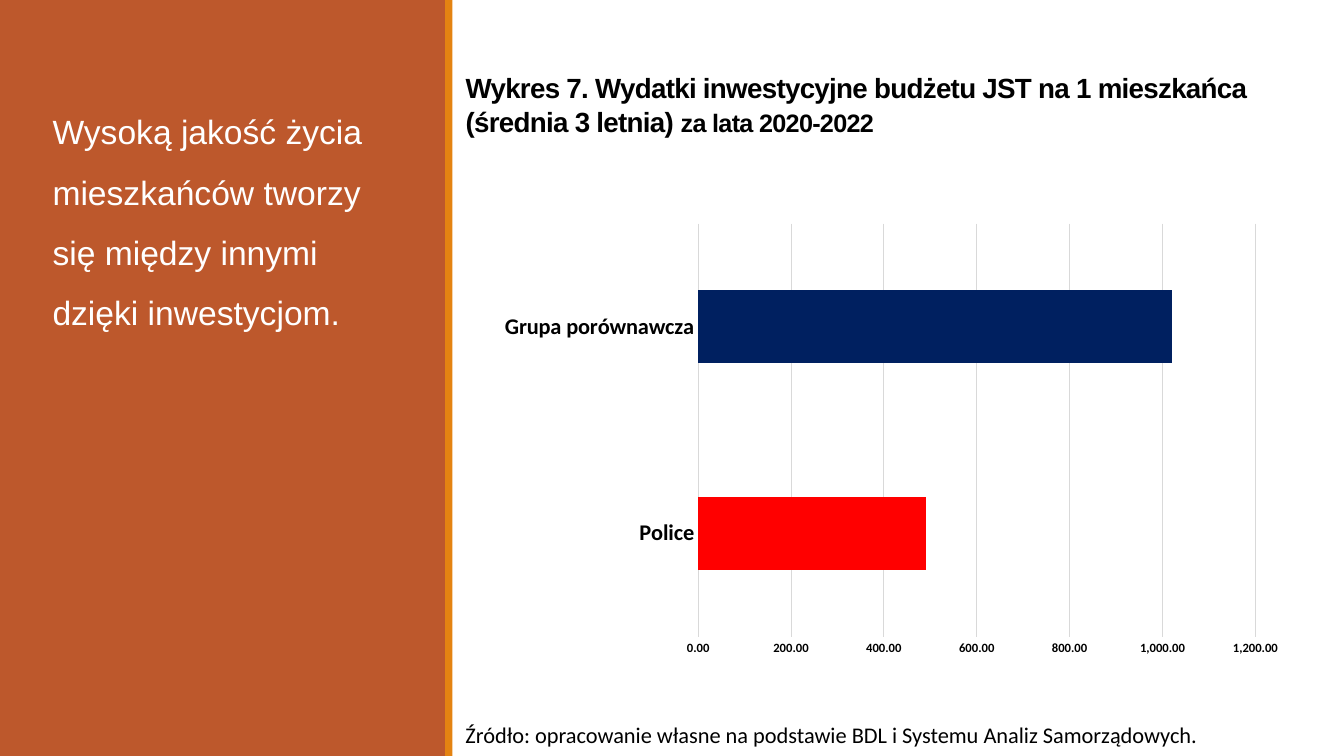
from dataclasses import dataclass

from lxml.etree import SubElement
from pptx import Presentation
from pptx.chart.data import CategoryChartData
from pptx.dml.color import RGBColor
from pptx.enum.chart import XL_CHART_TYPE as ChartType, XL_TICK_MARK as TickMark
from pptx.enum.shapes import MSO_SHAPE as ShapeKind
from pptx.enum.text import MSO_ANCHOR as Anchor, MSO_AUTO_SIZE as AutoSize, PP_ALIGN as Align
from pptx.oxml.ns import qn
from pptx.util import Cm, Pt

COLORS = {
    "rust": "BD582C",
    "orange": "E48312",
    "white": "FFFFFF",
    "black": "000000",
    "grid": "D9D9D9",
    "red": "FF0000",
    "navy": "002060",
}


@dataclass
class Box:
    left: float
    top: float
    width: float
    height: float

    def lengths(self) -> tuple:
        return Cm(self.left), Cm(self.top), Cm(self.width), Cm(self.height)


@dataclass
class Panel:
    box: Box
    color: str


@dataclass
class Bar:
    category: str
    value: float
    color: str


PANELS = [
    Panel(Box(0, 0, 11.25, 19.05), "rust"),
    Panel(Box(11.22, 0, 0.18, 19.05), "orange"),
]
BARS = [Bar("Police", 490, "red"), Bar("Grupa porównawcza", 1020, "navy")]
TITLE_BOX = Box(11.48, 1.75, 22.45, 1.85)
MESSAGE_BOX = Box(1.07, 2.16, 8.79, 6.22)
SOURCE_BOX = Box(11.48, 18.03, 19.2, 0.94)
CHART_BOX = Box(12.32, 5.41, 20.29, 11.33)


def rgb(name: str) -> RGBColor:
    return RGBColor.from_string(COLORS[name])


def place(shape, box: Box) -> None:
    shape.left, shape.top, shape.width, shape.height = box.lengths()


def style_font(font, name: str, size: float, color: str, bold: bool = False) -> None:
    font.name = name
    font.size = Pt(size)
    font.bold = bold
    font.color.rgb = rgb(color)


def add_panel(slide, panel: Panel) -> None:
    shape = slide.shapes.add_shape(ShapeKind.RECTANGLE, *panel.box.lengths())
    shape.shadow.inherit = False
    shape.fill.solid()
    shape.fill.fore_color.rgb = rgb(panel.color)
    shape.line.fill.background()
    slide.shapes.title.element.addprevious(shape.element)


def fill_title(title) -> None:
    place(title, TITLE_BOX)
    title.text_frame.auto_size = AutoSize.NONE
    title.text_frame.vertical_anchor = Anchor.BOTTOM
    paragraph = title.text_frame.paragraphs[0]
    paragraph.alignment = Align.LEFT
    parts = {
        "Wykres 7. Wydatki inwestycyjne budżetu JST na 1 mieszkańca (średnia 3 letnia) ": 19.8,
        "za lata 2020-2022": 18,
    }
    for text, size in parts.items():
        run = paragraph.add_run()
        run.text = text
        style_font(run.font, "Arial", size, "black", bold=True)
        run.font._element.set("spc", "-50")


def fill_message(body) -> None:
    place(body, MESSAGE_BOX)
    text_frame = body.text_frame
    text_frame.text = "Wysoką jakość życia mieszkańców tworzy się między innymi dzięki inwestycjom."
    text_frame.auto_size = AutoSize.SHAPE_TO_FIT_TEXT
    paragraph = text_frame.paragraphs[0]
    paragraph.line_spacing = 1.5
    paragraph.space_before = Pt(0)
    style_font(paragraph.runs[0].font, "Arial", 24, "white")
    properties = paragraph._p.get_or_add_pPr()
    properties.set("marL", "0")
    properties.set("indent", "0")
    SubElement(properties, qn("a:buNone"))


def add_source(slide) -> None:
    text_frame = slide.shapes.add_textbox(*SOURCE_BOX.lengths()).text_frame
    text_frame.text = "Źródło: opracowanie własne na podstawie BDL i Systemu Analiz Samorządowych."
    text_frame.word_wrap = False
    text_frame.auto_size = AutoSize.SHAPE_TO_FIT_TEXT
    text_frame.vertical_anchor = Anchor.MIDDLE
    style_font(text_frame.paragraphs[0].runs[0].font, "Calibri", 16, "black")


def style_axis(axis, size: float) -> None:
    axis.major_tick_mark = TickMark.NONE
    axis.minor_tick_mark = TickMark.NONE
    style_font(axis.tick_labels.font, "Calibri", size, "black", bold=True)


def style_line(line) -> None:
    line.color.rgb = rgb("grid")
    line.width = Pt(0.75)


def add_spending_chart(slide) -> None:
    data = CategoryChartData(number_format="#,##0.00")
    data.categories = [bar.category for bar in BARS]
    data.add_series("Series 1", [bar.value for bar in BARS])
    chart = slide.shapes.add_chart(ChartType.BAR_CLUSTERED, *CHART_BOX.lengths(), data).chart
    chart.has_title = False
    chart.has_legend = False
    style_font(chart.font, "Calibri", 10, "black")

    style_axis(chart.category_axis, 16)
    style_line(chart.category_axis.format.line)

    value_axis = chart.value_axis
    style_axis(value_axis, 9)
    value_axis.minimum_scale = 0
    value_axis.maximum_scale = 1200
    value_axis.major_unit = 200
    value_axis.format.line.fill.background()
    style_line(value_axis.major_gridlines.format.line)
    value_axis.tick_labels.number_format = "#,##0.00"
    value_axis.tick_labels.number_format_is_linked = False

    plot = chart.plots[0]
    plot.gap_width = 182
    plot.vary_by_categories = False
    for index, bar in enumerate(BARS):
        fill = plot.series[0].points[index].format.fill
        fill.solid()
        fill.fore_color.rgb = rgb(bar.color)


def main() -> None:
    presentation = Presentation()
    presentation.slide_width = Cm(33.87)
    presentation.slide_height = Cm(19.05)
    slide = presentation.slides.add_slide(presentation.slide_layouts[1])
    for panel in PANELS:
        add_panel(slide, panel)
    fill_title(slide.shapes.title)
    fill_message(slide.placeholders[1])
    add_source(slide)
    add_spending_chart(slide)
    presentation.save("out.pptx")


if __name__ == "__main__":
    main()
